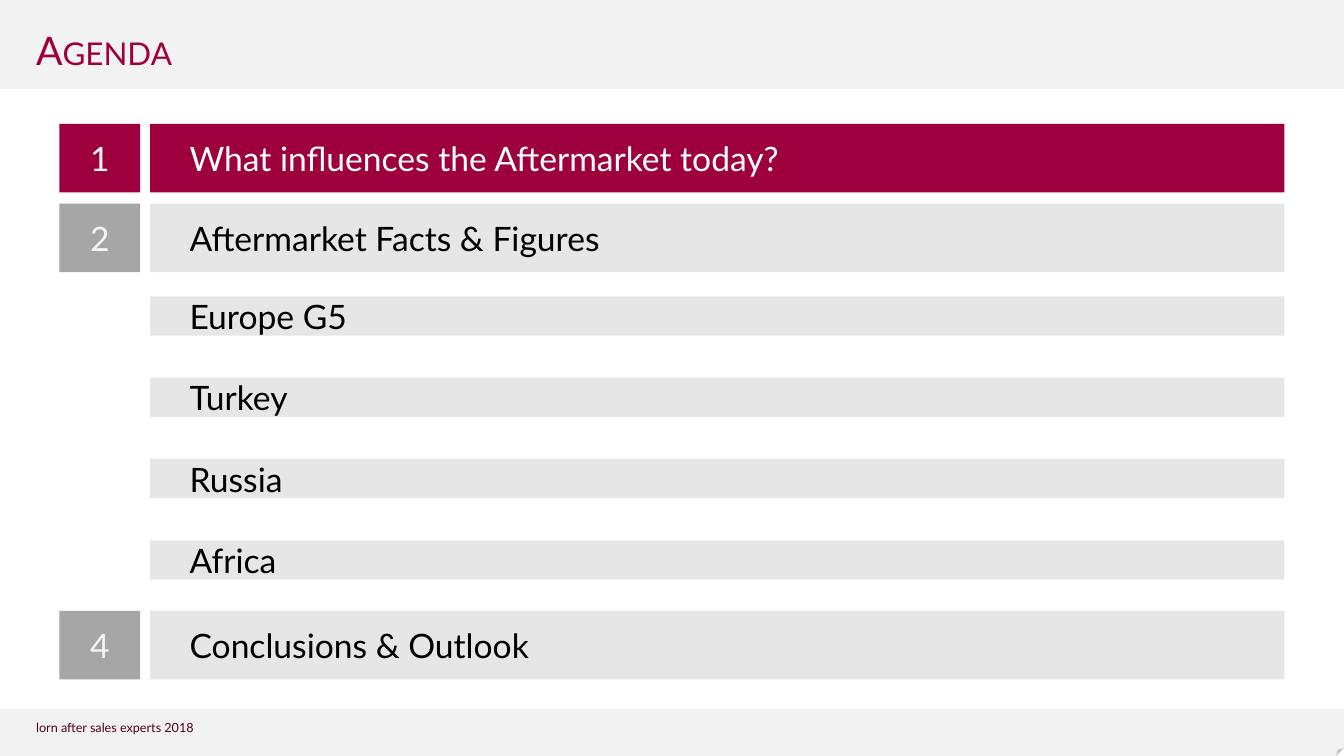
import pptx
import pptx.util
import pptx.dml.color
import pptx.enum.shapes
import pptx.enum.text
from dataclasses import dataclass

Inches = pptx.util.Inches
SHAPE = pptx.enum.shapes.MSO_SHAPE
ALIGN = pptx.enum.text.PP_ALIGN
ANCHOR = pptx.enum.text.MSO_ANCHOR

TITLE = "Agenda"
FOOTER = "lorn after sales experts 2018"
# number, wording, top
CHAPTERS = [
    ("1", "What influences the Aftermarket today?", 1.23),
    ("2", "Aftermarket Facts & Figures", 2.02),
    ("4", "Conclusions & Outlook", 6.06),
]
CURRENT = "1"
REGIONS = ["Europe G5", "Turkey", "Russia", "Africa"]


@dataclass(frozen=True)
class Theme:
    font: str = "Lato"
    accent: str = "9D003C"
    band: str = "F2F2F2"
    bar: str = "E6E6E6"
    badge: str = "A6A6A6"
    badge_text: str = "F3F6F7"
    bar_text: str = "000000"
    current_text: str = "FFFFFF"
    footer_text: str = "4E001E"
    title_size: int = 28
    item_size: int = 24
    footer_size: int = 9


THEME = Theme()
SLIDE_W, SLIDE_H = 13.33, 7.5
HEADER_H, FOOTER_TOP = 0.88, 7.03
BADGE_X, BADGE_W = 0.59, 0.8
BAR_X, BAR_W = 1.49, 11.25
CHAPTER_H, REGION_H = 0.68, 0.39
REGION_FIRST, REGION_LAST = 2.94, 5.36
BADGE_INSETS = (0.1, 0.05, 0.1, 0.05)
BAR_INSETS = (0.39, 0.14, 0.31, 0.14)


def rgb(color):
    return pptx.dml.color.RGBColor.from_string(color)


def add_block(s, box, fill, kind=SHAPE.RECTANGLE):
    sp = s.shapes.add_shape(kind, *map(Inches, box))
    sp.shadow.inherit = False
    sp.fill.solid()
    sp.fill.fore_color.rgb = rgb(fill)
    sp.line.fill.background()
    return sp


def write(sp, text, size, color, anchor, align=ALIGN.LEFT,
          insets=BADGE_INSETS, wrap=True):
    tf = sp.text_frame
    tf.text = text
    tf.word_wrap = wrap
    tf.vertical_anchor = anchor
    (tf.margin_left, tf.margin_top,
     tf.margin_right, tf.margin_bottom) = map(Inches, insets)
    p = tf.paragraphs[0]
    p.alignment = align
    r = p.runs[0]
    r.font.name = THEME.font
    r.font.size = pptx.util.Pt(size)
    r.font.color.rgb = rgb(color)
    return r


def add_bar(s, text, top, height, fill=THEME.bar, color=THEME.bar_text):
    sp = add_block(s, (BAR_X, top, BAR_W, height), fill)
    write(sp, text, THEME.item_size, color, ANCHOR.MIDDLE,
          insets=BAR_INSETS, wrap=False)


def add_chapter(s, number, text, top):
    current = number == CURRENT
    badge = add_block(s, (BADGE_X, top, BADGE_W, CHAPTER_H),
                      THEME.accent if current else THEME.badge)
    write(badge, number, THEME.item_size, THEME.badge_text,
          ANCHOR.MIDDLE, ALIGN.CENTER)
    if current:
        add_bar(s, text, top, CHAPTER_H, THEME.accent, THEME.current_text)
    else:
        add_bar(s, text, top, CHAPTER_H)


def add_frame(s):
    """Header and footer bands with their texts."""
    add_block(s, (0, 0, SLIDE_W, HEADER_H), THEME.band)
    add_block(s, (0, FOOTER_TOP, SLIDE_W, SLIDE_H - FOOTER_TOP),
              THEME.band, SHAPE.FOLDED_CORNER)
    footer = s.shapes.add_textbox(*map(Inches, (0.26, 7.09, 4.9, 0.25)))
    write(footer, FOOTER, THEME.footer_size, THEME.footer_text, ANCHOR.TOP)
    title = s.shapes.add_textbox(*map(Inches, (0.26, 0.09, 12, 0.69)))
    r = write(title, TITLE, THEME.title_size, THEME.accent, ANCHOR.BOTTOM)
    r.font._element.set("cap", "small")


def main():
    prs = pptx.Presentation()
    prs.slide_width, prs.slide_height = Inches(SLIDE_W), Inches(SLIDE_H)
    s = prs.slides.add_slide(prs.slide_layouts[6])
    add_frame(s)
    for number, text, top in CHAPTERS:
        add_chapter(s, number, text, top)
    pitch = (REGION_LAST - REGION_FIRST) / (len(REGIONS) - 1)
    for i, region in enumerate(REGIONS):
        add_bar(s, region, REGION_FIRST + i * pitch, REGION_H)
    prs.save("out.pptx")


if __name__ == "__main__":
    main()
